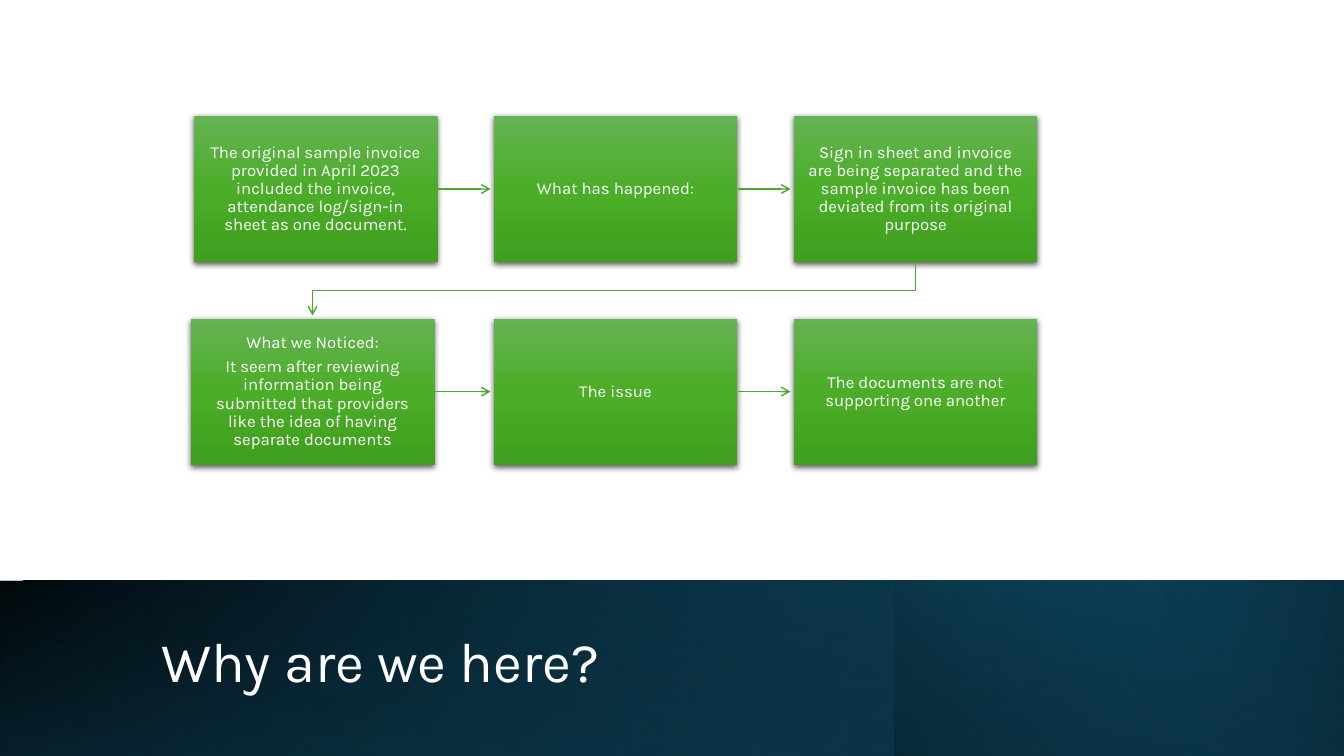
"""Builds the "Why are we here?" slide: six linked boxes above a dark title band."""
from lxml import etree
from pptx import Presentation
from pptx.dml.color import RGBColor
from pptx.enum.shapes import MSO_CONNECTOR, MSO_SHAPE
from pptx.enum.text import MSO_ANCHOR, PP_ALIGN
from pptx.oxml.ns import qn
from pptx.util import Inches, Pt

RECT = MSO_SHAPE.RECTANGLE
STRAIGHT = MSO_CONNECTOR.STRAIGHT
MIDDLE = MSO_ANCHOR.MIDDLE
LEFT, CENTER = PP_ALIGN.LEFT, PP_ALIGN.CENTER

WIDTH, HEIGHT = 13.33, 7.5
BAND_TOP, BAND_H = 5.76, 1.74
COL_X, COL_STEP = 1.92, 2.975
ROW_Y, ROW_STEP = 1.15, 2.01
BOX_W, BOX_H = 2.42, 1.45
NUDGE, GAP = 0.03, 0.03
FONT, WHITE, GREEN = "Karla", "FFFFFF", "4EA72E"
BOX_STOPS = [(0, "66B354", 100), (50, "4BAD28", 100), (100, "409F1E", 100)]

BAND_LAYERS = [
    (0, WIDTH, 140, [(0, "000000", 100), (100, "156082", 100)], True),
    (0, WIDTH, 170, [(0, "156082", 0), (100, "0B3041", 100)], True),
    (8.87, WIDTH - 8.87, 220, [(0, "0B3041", 100), (100, "156082", 0)], True),
    (0, WIDTH, 280, [(0, "000000", 0), (99, "0B3041", 55)], False),
]

STEPS = [
    [
        ["The original sample invoice provided in April 2023 included the invoice, "
         "attendance log/sign-in sheet as one document."],
        ["What has happened:"],
        ["Sign in sheet and invoice are being separated and the sample invoice "
         "has been deviated from its original purpose"],
    ],
    [
        ["What we Noticed:",
         "It seem after reviewing information being submitted that providers "
         "like the idea of having separate documents"],
        ["The issue"],
        ["The documents are not supporting one another"],
    ],
]


def rgb(color):
    """Turn a hex string into a colour."""
    return RGBColor.from_string(color)


def add_color(parent, color, opacity):
    """Add an XML colour with an opacity in percent."""
    clr = etree.SubElement(parent, qn("a:srgbClr"), val=color)
    etree.SubElement(clr, qn("a:alpha"), val=str(opacity * 1000))


def add_gradient_rect(s, x, y, w, h, stops, angle):
    """Draw a borderless rectangle with a linear gradient."""
    sp = s.shapes.add_shape(RECT, Inches(x), Inches(y), Inches(w), Inches(h))
    sp.shadow.inherit = False
    sp.line.fill.background()
    sp.fill.background()
    grad = etree.Element(qn("a:gradFill"), rotWithShape="1")
    stop_list = etree.SubElement(grad, qn("a:gsLst"))
    for position, color, opacity in stops:
        stop = etree.SubElement(stop_list, qn("a:gs"), pos=str(position * 1000))
        add_color(stop, color, opacity)
    etree.SubElement(grad, qn("a:lin"), ang=str(angle * 60000), scaled="0")
    props = sp.element.spPr
    props.replace(props.find(qn("a:noFill")), grad)
    return sp


def add_shadow(sp):
    """Give a shape a soft shadow below it."""
    effects = sp.element.spPr.find(qn("a:effectLst"))
    shadow = etree.SubElement(effects, qn("a:outerShdw"), blurRad=str(Pt(4.5)),
                              dist=str(Pt(1.5)), dir="5400000", rotWithShape="0")
    add_color(shadow, "000000", 63)


def write(tf, lines, size, align, space_after=0):
    """Fill a text frame with white paragraphs."""
    tf.word_wrap = True
    tf.vertical_anchor = MIDDLE
    for i, line in enumerate(lines):
        p = tf.add_paragraph() if i else tf.paragraphs[0]
        p.text = line
        p.alignment = align
        p.line_spacing = 0.9
        p.space_after = Pt(space_after)
        p.font.name = FONT
        p.font.size = Pt(size)
        p.font.color.rgb = rgb(WHITE)


def box_origin(row, col):
    """Return the top left corner of a box; the second row starts slightly left."""
    x = COL_X + col * COL_STEP - (NUDGE if (row, col) == (1, 0) else 0)
    return x, ROW_Y + row * ROW_STEP


def add_box(s, row, col, lines):
    """Draw one step of the process."""
    sp = add_gradient_rect(s, *box_origin(row, col), BOX_W, BOX_H, BOX_STOPS, 90)
    add_shadow(sp)
    tf = sp.text_frame
    tf.margin_left = tf.margin_right = tf.margin_top = tf.margin_bottom = Inches(0.12)
    write(tf, lines, 12, CENTER, 4.2)


def style_arrow(sp):
    """Make a line green with an open arrowhead at its end."""
    sp.line.color.rgb = rgb(GREEN)
    sp.line.width = Pt(1)
    ln = sp.element.spPr.find(qn("a:ln"))
    etree.SubElement(ln, qn("a:tailEnd"), type="arrow")


def add_arrow(s, row, col):
    """Link a box to the next one in its row."""
    x, y = box_origin(row, col)
    next_x = box_origin(row, col + 1)[0]
    middle = Inches(y + BOX_H / 2)
    sp = s.shapes.add_connector(STRAIGHT, Inches(x + BOX_W), middle,
                                Inches(next_x - GAP), middle)
    style_arrow(sp)
    etree.SubElement(sp.element.spPr, qn("a:effectLst"))


def add_return_arrow(s):
    """Link the end of the first row to the start of the second."""
    start_x, start_y = box_origin(0, 2)
    end_x, end_y = box_origin(1, 0)
    start_x, end_x = start_x + BOX_W / 2, end_x + BOX_W / 2
    start_y += BOX_H
    turn_y = (start_y + end_y) / 2
    points = [(start_x, turn_y), (end_x, turn_y), (end_x, end_y - GAP)]
    builder = s.shapes.build_freeform(Inches(start_x), Inches(start_y))
    builder.add_line_segments([(Inches(x), Inches(y)) for x, y in points], close=False)
    sp = builder.convert_to_shape()
    sp.shadow.inherit = False
    sp.fill.background()
    style_arrow(sp)


def add_band(s):
    """Layer the gradients of the title band."""
    for x, w, angle, stops, flipped in BAND_LAYERS:
        sp = add_gradient_rect(s, x, BAND_TOP, w, BAND_H, stops, angle)
        if flipped:
            sp.element.spPr.find(qn("a:xfrm")).set("flipH", "1")
        else:
            sp.rotation = 180


def add_title(s, text):
    """Write the title on the band."""
    sp = s.shapes.add_textbox(Inches(1.5), Inches(6.03), Inches(10.82), Inches(1.13))
    write(sp.text_frame, [text], 40, LEFT)


def main():
    """Build and save the slide."""
    prs = Presentation()
    prs.slide_width, prs.slide_height = Inches(WIDTH), Inches(HEIGHT)
    s = prs.slides.add_slide(prs.slide_layouts[6])
    add_band(s)
    add_title(s, "Why are we here?")
    for row, steps in enumerate(STEPS):
        for col, lines in enumerate(steps):
            if col:
                add_arrow(s, row, col - 1)
            add_box(s, row, col, lines)
    add_return_arrow(s)
    prs.save("out.pptx")


if __name__ == "__main__":
    main()
